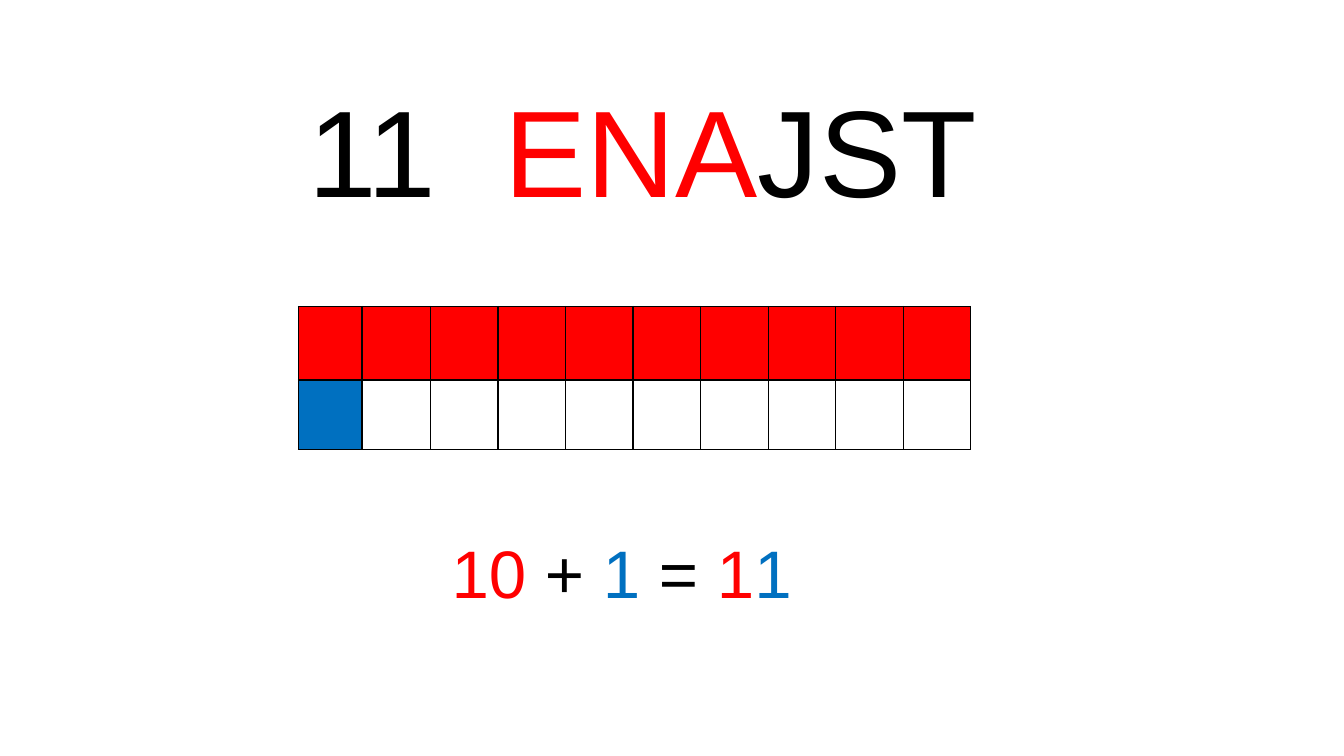
from lxml.etree import SubElement
from pptx import Presentation
from pptx.dml.color import RGBColor
from pptx.oxml.ns import qn
from pptx.util import Emu, Pt

PX = 9144  # 100 px to the inch
RED, BLUE, BLACK, WHITE = "FF0000", "0070C0", "000000", "FFFFFF"


def px(*nums):
    """Turn px lengths into EMU."""
    return [Emu(n * PX) for n in nums]


def write(box, runs, size, font="Arial"):
    """Add a text box holding one line of (text, colour) runs."""
    frame = slide.shapes.add_textbox(*px(*box)).text_frame
    frame.word_wrap = True
    for text, color in runs:
        run = frame.paragraphs[0].add_run()
        run.text = text
        run.font.name = font
        run.font.size = Pt(size)
        run.font.color.rgb = RGBColor.from_string(color)


deck = Presentation()
deck.slide_width, deck.slide_height = px(1333, 750)
slide = deck.slides.add_slide(deck.slide_layouts[6])

# Ten-frame: a full red row of ten and one blue unit
widths = [63, 68] + [67] * 8
heights = [73, 69]
fills = [[RED] * 10, [BLUE] + [WHITE] * 9]
grid = slide.shapes.add_table(
    2, 10, *px(296, 304, sum(widths), sum(heights))).table
grid.first_row = grid.horz_banding = False
for col, width in zip(grid.columns, px(*widths)):
    col.width = width
for row, height, colors in zip(grid.rows, px(*heights), fills):
    row.height = height
    for cell, color in zip(row.cells, colors):
        props = cell._tc.get_or_add_tcPr()
        for side in ("lnL", "lnR", "lnT", "lnB"):
            line = SubElement(props, qn(f"a:{side}"), w=str(Pt(1)))
            solid = SubElement(line, qn("a:solidFill"))
            SubElement(solid, qn("a:srgbClr"), val=BLACK)
        cell.fill.solid()
        cell.fill.fore_color.rgb = RGBColor.from_string(color)

write((296, 69, 869, 158),
      [("11  ", BLACK), ("ENA", RED), ("JST", BLACK)], size=88)
write((438, 522, 382, 91),
      [("10", RED), (" + ", BLACK), ("1", BLUE), (" = ", BLACK),
       ("1", RED), ("1", BLUE)], size=48)

deck.save("out.pptx")
